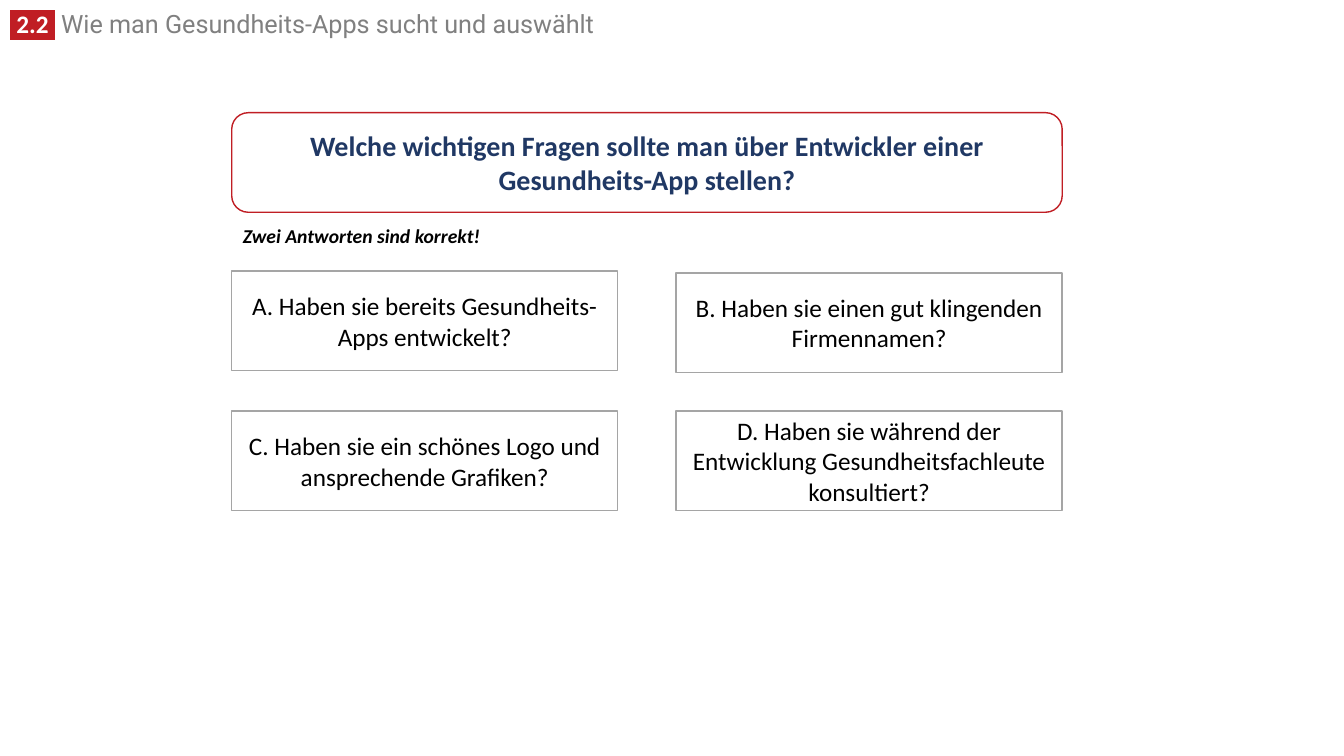
from lxml.etree import SubElement
from pptx import Presentation
from pptx.dml.color import RGBColor
from pptx.enum.shapes import MSO_SHAPE
from pptx.enum.text import MSO_ANCHOR, MSO_AUTO_SIZE, PP_ALIGN
from pptx.oxml.ns import qn
from pptx.util import Cm, Pt

COLORS = {
    "red": "C01E24",
    "navy": "203864",
    "grey": "808080",
    "border": "A5A5A5",
    "black": "000000",
    "white": "FFFFFF",
}
LEFT, WIDTH, BOX_HEIGHT = 5.84, 20.93, 2.51
ANSWER_WIDTH = 9.73
RIGHT = LEFT + WIDTH - ANSWER_WIDTH
ANSWERS = [
    ("A. Haben sie bereits Gesundheits-Apps entwickelt?", LEFT, 6.83),
    ("B. Haben sie einen gut klingenden Firmennamen?", RIGHT, 6.88),
    ("C. Haben sie ein schönes Logo und ansprechende Grafiken?", LEFT, 10.36),
    ("D. Haben sie während der Entwicklung Gesundheitsfachleute konsultiert?", RIGHT, 10.36),
]


def color(name):
    return RGBColor.from_string(COLORS[name])


class QuizSlide:
    def __init__(self, presentation):
        self.slide = presentation.slides.add_slide(presentation.slide_layouts[5])
        self.format = {"name": "Calibri", "size": Pt(18), "bold": False, "italic": False}

    def add_text(self, paragraph, text, ink, **changes):
        run = paragraph.add_run()
        run.text = text
        for attribute, value in {**self.format, **changes}.items():
            setattr(run.font, attribute, value)
        run.font.color.rgb = color(ink)
        return run

    def header(self, number, topic):
        """Put the highlighted section number and the topic in the title."""
        title = self.slide.shapes.title
        title.left, title.top, title.width, title.height = Cm(0), Cm(0.23), Cm(24.18), Cm(0.89)
        frame = title.text_frame
        frame.word_wrap = True
        frame.auto_size = MSO_AUTO_SIZE.SHAPE_TO_FIT_TEXT
        frame.vertical_anchor = MSO_ANCHOR.TOP
        paragraph = frame.paragraphs[0]
        paragraph.alignment = PP_ALIGN.LEFT
        paragraph.line_spacing = 0.8
        for text, font in ((" ", "Roboto"), (number, "Calibri"), (" ", "Roboto")):
            run = self.add_text(paragraph, text, "white", name=font, bold=True)
            self.highlight(run, "red")
        self.add_text(paragraph, f" {topic}", "grey", name="Roboto")

    def highlight(self, run, marker):
        properties = run._r.get_or_add_rPr()
        mark = SubElement(properties, qn("a:highlight"))
        SubElement(mark, qn("a:srgbClr"), val=COLORS[marker])
        properties.find(qn("a:solidFill")).addnext(mark)

    def box(self, kind, text, left, top, width, border, ink, **changes):
        shape = self.slide.shapes.add_shape(kind, Cm(left), Cm(top), Cm(width), Cm(BOX_HEIGHT))
        shape.shadow.inherit = False
        shape.fill.solid()
        shape.fill.fore_color.rgb = color("white")
        shape.line.color.rgb = color(border)
        shape.line.width = Pt(1)
        frame = shape.text_frame
        frame.word_wrap = True
        frame.vertical_anchor = MSO_ANCHOR.MIDDLE
        paragraph = frame.paragraphs[0]
        paragraph.alignment = PP_ALIGN.CENTER
        self.add_text(paragraph, text, ink, **changes)

    def hint(self, text, left, top, width, height):
        frame = self.slide.shapes.add_textbox(Cm(left), Cm(top), Cm(width), Cm(height)).text_frame
        frame.word_wrap = False
        frame.auto_size = MSO_AUTO_SIZE.SHAPE_TO_FIT_TEXT
        self.add_text(frame.paragraphs[0], text, "black", size=Pt(14), bold=True, italic=True)


def main():
    presentation = Presentation()
    presentation.slide_width, presentation.slide_height = Cm(33.87), Cm(19.05)
    quiz = QuizSlide(presentation)
    quiz.header("2.2", "Wie man Gesundheits-Apps sucht und auswählt")
    quiz.box(
        MSO_SHAPE.ROUNDED_RECTANGLE,
        "Welche wichtigen Fragen sollte man über Entwickler einer Gesundheits-App stellen?",
        LEFT, 2.84, WIDTH, "red", "navy", size=Pt(20), bold=True,
    )
    quiz.hint("Zwei Antworten sind korrekt!", 5.87, 5.51, 6.53, 0.86)
    for answer, left, top in ANSWERS:
        quiz.box(MSO_SHAPE.RECTANGLE, answer, left, top, ANSWER_WIDTH, "border", "black")
    presentation.save("out.pptx")


if __name__ == "__main__":
    main()
